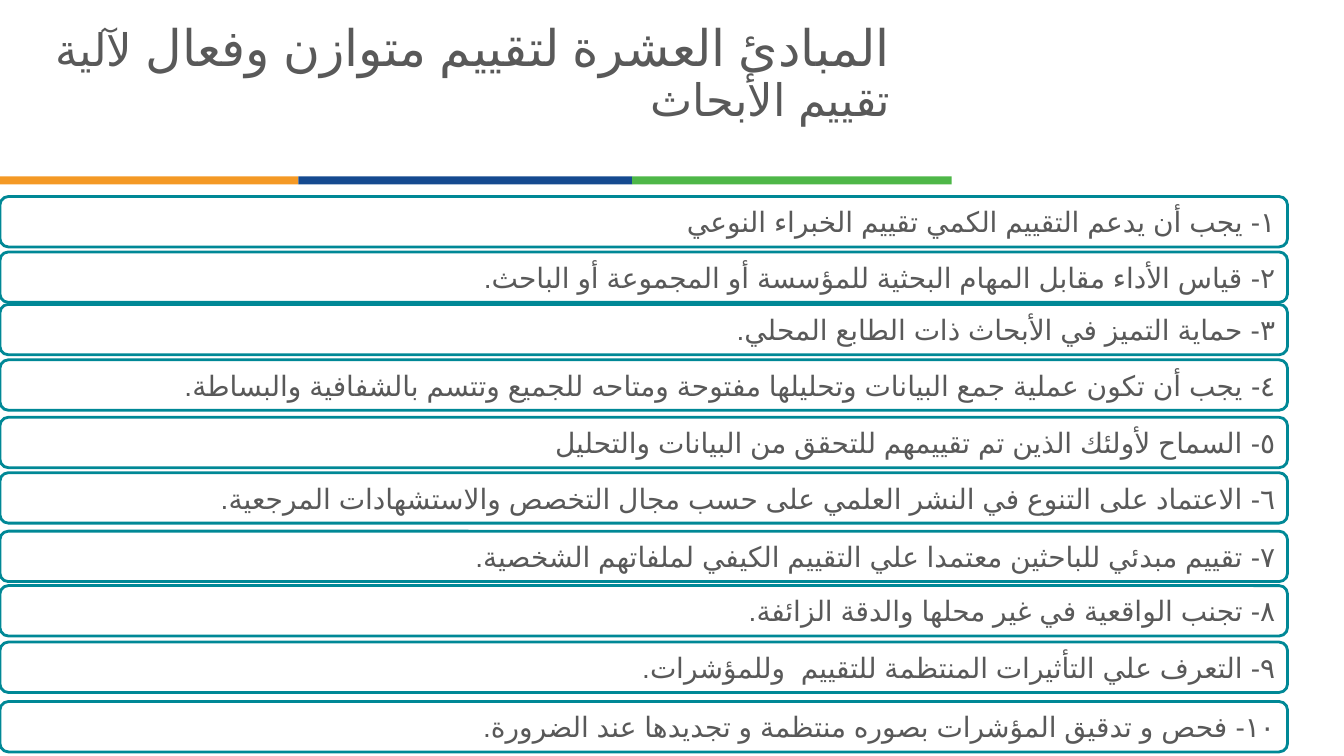
from dataclasses import dataclass

from lxml.etree import SubElement
from pptx import Presentation
from pptx.dml.color import RGBColor as RGB
from pptx.enum.lang import MSO_LANGUAGE_ID as LANG
from pptx.enum.shapes import MSO_SHAPE as SHAPE
from pptx.enum.text import MSO_ANCHOR as ANCHOR, PP_ALIGN as ALIGN
from pptx.oxml.ns import qn
from pptx.util import Inches, Pt


@dataclass(frozen=True)
class Theme:
    text: RGB = RGB(0x59, 0x59, 0x59)
    border: RGB = RGB(0x00, 0x88, 0x96)
    paper: RGB = RGB(0xFF, 0xFF, 0xFF)
    orange: RGB = RGB(0xF4, 0x99, 0x25)
    blue: RGB = RGB(0x15, 0x4A, 0x90)
    green: RGB = RGB(0x4E, 0xB7, 0x48)
    title_font: str = "Open Sans"
    body_font: str = "Arial"
    title_size: int = 36
    subtitle_size: int = 32
    body_size: int = 20


THEME = Theme()
PRINCIPLES = [
    (1.95, "١- يجب أن يدعم التقييم الكمي تقييم الخبراء النوعي"),
    (2.50, "٢- قياس الأداء مقابل المهام البحثية للمؤسسة أو المجموعة أو الباحث."),
    (3.02, "٣- حماية التميز في الأبحاث ذات الطابع المحلي."),
    (3.57, "٤- يجب أن تكون عملية جمع البيانات وتحليلها مفتوحة ومتاحه للجميع وتتسم بالشفافية والبساطة."),
    (4.14, "٥- السماح لأولئك الذين تم تقييمهم للتحقق من البيانات والتحليل"),
    (4.69, "٦- الاعتماد على التنوع في النشر العلمي على حسب مجال التخصص والاستشهادات المرجعية."),
    (5.27, "٧- تقييم مبدئي للباحثين معتمدا علي التقييم الكيفي لملفاتهم الشخصية."),
    (5.81, "٨- تجنب الواقعية في غير محلها والدقة الزائفة."),
    (6.37, "٩- التعرف علي التأثيرات المنتظمة للتقييم  وللمؤشرات."),
    (6.96, "١٠- فحص و تدقيق المؤشرات بصوره منتظمة و تجديدها عند الضرورة."),
]


def rtl_paragraph(tf):
    p = tf.paragraphs[0]
    p.alignment = ALIGN.RIGHT
    p._p.get_or_add_pPr().set("rtl", "1")
    return p


def add_run(p, text, size, font):
    """Add an Arabic run whose font also covers Arabic script."""
    r = p.add_run()
    r.text = text
    r.font.size = Pt(size)
    r.font.name = font
    r.font.color.rgb = THEME.text
    r.font.language_id = LANG.ARABIC
    SubElement(r.font._element, qn("a:cs"), typeface=font)


def add_box(slide, shape, left, top, width, height, fill):
    sp = slide.shapes.add_shape(
        shape, Inches(left), Inches(top), Inches(width), Inches(height))
    sp.shadow.inherit = False
    sp.fill.solid()
    sp.fill.fore_color.rgb = fill
    sp.line.fill.background()
    return sp


def add_title(slide, left, top, width, height):
    sp = slide.shapes.add_textbox(
        Inches(left), Inches(top), Inches(width), Inches(height))
    tf = sp.text_frame
    tf.word_wrap = True
    tf.vertical_anchor = ANCHOR.MIDDLE
    p = rtl_paragraph(tf)
    p.line_spacing = 0.9
    add_run(p, "المبادئ العشرة لتقييم متوازن وفعال ", THEME.title_size, THEME.title_font)
    add_run(p, "لآلية تقييم الأبحاث", THEME.subtitle_size, THEME.body_font)


def add_colour_bar(slide, left, top, height):
    for width, colour in ((2.96, THEME.orange), (3.31, THEME.blue), (3.17, THEME.green)):
        add_box(slide, SHAPE.RECTANGLE, left, top, width, height, colour)
        left += width


def add_principle(slide, left, top, width, height, text):
    sp = add_box(slide, SHAPE.ROUNDED_RECTANGLE, left, top, width, height, THEME.paper)
    sp.line.color.rgb = THEME.border
    sp.line.width = Pt(2)
    tf = sp.text_frame
    tf.word_wrap = True
    tf.vertical_anchor = ANCHOR.MIDDLE
    tf.margin_left = tf.margin_right = Inches(0.1)
    tf.margin_top = tf.margin_bottom = Inches(0.05)
    add_run(rtl_paragraph(tf), text, THEME.body_size, THEME.body_font)


def main():
    prs = Presentation()
    prs.slide_width, prs.slide_height = Inches(13.33), Inches(7.5)
    slide = prs.slides.add_slide(prs.slide_layouts[6])
    add_colour_bar(slide, 0, 1.75, 0.08)
    add_title(slide, 0, 0.15, 8.93, 1.18)
    for top, text in PRINCIPLES:
        add_principle(slide, 0, top, 12.77, 0.5, text)
    prs.save("out.pptx")


if __name__ == "__main__":
    main()
